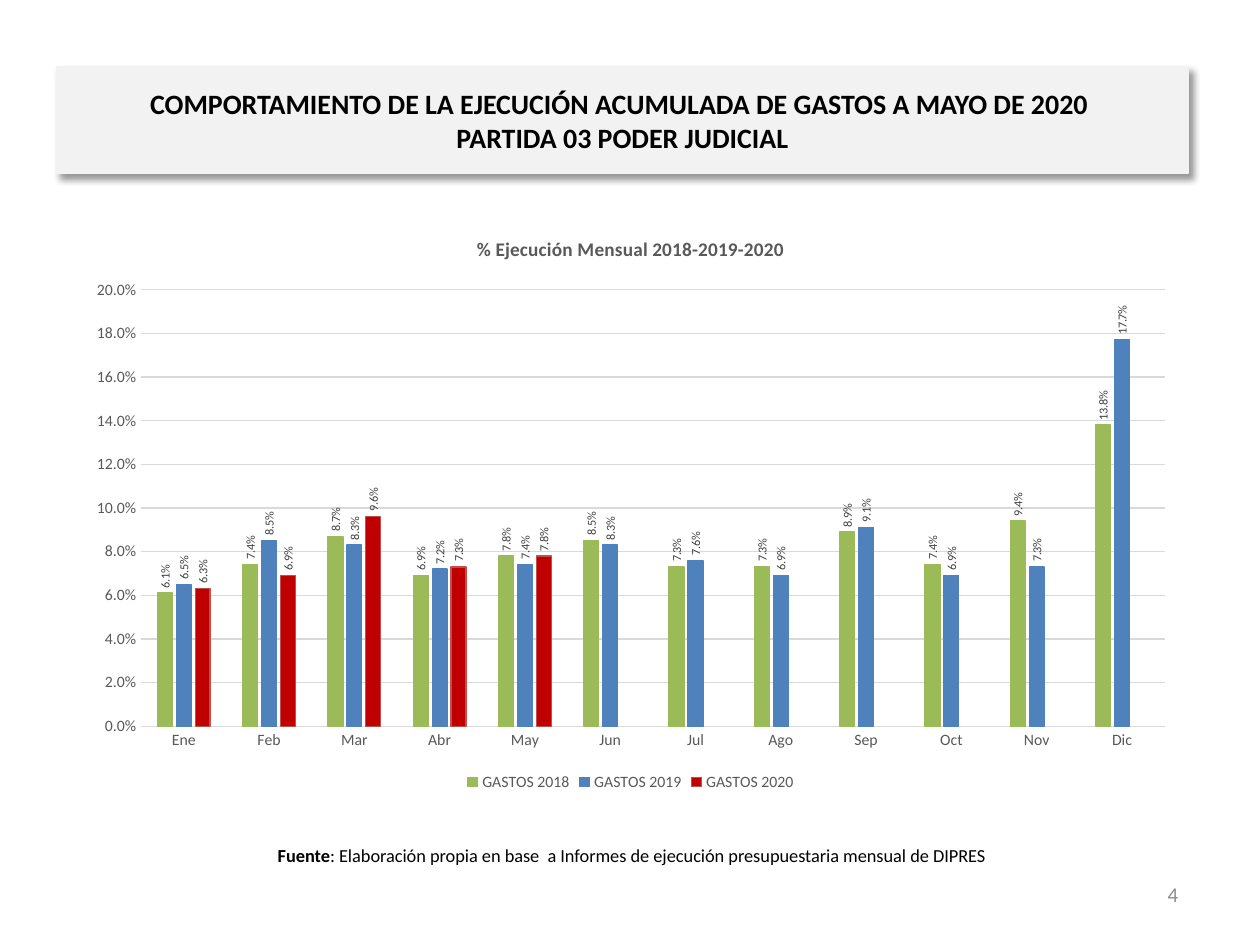
from dataclasses import dataclass

from lxml import etree
from pptx import Presentation
from pptx.chart.data import CategoryChartData
from pptx.dml.color import RGBColor
from pptx.enum.chart import XL_CHART_TYPE, XL_LABEL_POSITION, XL_LEGEND_POSITION, XL_TICK_MARK
from pptx.enum.text import MSO_ANCHOR, PP_ALIGN
from pptx.oxml import parse_xml
from pptx.oxml.ns import nsdecls, qn
from pptx.util import Inches, Pt

COLUMNS = XL_CHART_TYPE.COLUMN_CLUSTERED
OUTSIDE_END = XL_LABEL_POSITION.OUTSIDE_END
BOTTOM = XL_LEGEND_POSITION.BOTTOM
NO_TICK = XL_TICK_MARK.NONE
MIDDLE = MSO_ANCHOR.MIDDLE
CENTER, RIGHT = PP_ALIGN.CENTER, PP_ALIGN.RIGHT

FONT = "Calibri"
PERCENT = "0.0%"
BLACK = RGBColor(0x00, 0x00, 0x00)
PANEL = RGBColor(0xF2, 0xF2, 0xF2)
PAGE_NUMBER = RGBColor(0x8C, 0x8C, 0x8C)
AXIS_TEXT = RGBColor(0x59, 0x59, 0x59)
LABEL_TEXT = RGBColor(0x40, 0x40, 0x40)
GRID = RGBColor(0xD9, 0xD9, 0xD9)
GREEN = RGBColor(0x9B, 0xBB, 0x59)
BLUE = RGBColor(0x4F, 0x81, 0xBD)
RED = RGBColor(0xC0, 0x00, 0x00)
RED_EDGE = RGBColor(0xC0, 0x50, 0x4D)
HAIRLINE = Pt(0.75)

MONTHS = "Ene Feb Mar Abr May Jun Jul Ago Sep Oct Nov Dic".split()


@dataclass(frozen=True)
class Spending:
    name: str
    percents: tuple[float, ...]
    fill: RGBColor
    edge: RGBColor


SPENDING = [
    Spending("GASTOS 2018", (6.1, 7.4, 8.7, 6.9, 7.8, 8.5, 7.3, 7.3, 8.9, 7.4, 9.4, 13.8), GREEN, GREEN),
    Spending("GASTOS 2019", (6.5, 8.5, 8.3, 7.2, 7.4, 8.3, 7.6, 6.9, 9.1, 6.9, 7.3, 17.7), BLUE, BLUE),
    Spending("GASTOS 2020", (6.3, 6.9, 9.6, 7.3, 7.8), RED, RED_EDGE),
]


@dataclass(frozen=True)
class Area:
    """A rectangle in inches."""
    left: float
    top: float
    width: float
    height: float

    def lengths(self) -> list[int]:
        return [Inches(n) for n in (self.left, self.top, self.width, self.height)]


TITLE_AREA = Area(0.45, 0.53, 8.98, 0.85)
CHART_AREA = Area(0.59, 1.7, 8.83, 4.62)
SOURCE_AREA = Area(0.42, 6.59, 9.19, 0.4)
NUMBER_AREA = Area(7.12, 6.9, 2.33, 0.4)
PLOT_SHARES = {"x": 0.06, "y": 0.13, "w": 0.92, "h": 0.75}


def style_font(font, size: float, color: RGBColor, bold: bool = False) -> None:
    font.name, font.size, font.bold = FONT, Pt(size), bold
    font.color.rgb = color


def write(para, text: str, *, size: float, color: RGBColor = BLACK,
          bold: bool = False, align=CENTER) -> None:
    """Append formatted text to a paragraph, with a line break at each newline."""
    para.alignment = align
    for index, line in enumerate(text.split("\n")):
        if index:
            para.add_line_break()
        span = para.add_run()
        span.text = line
        style_font(span.font, size, color, bold)


def add_text_box(page, area: Area):
    frame = page.shapes.add_textbox(*area.lengths()).text_frame
    frame.word_wrap = True
    frame.vertical_anchor = MIDDLE
    return frame.paragraphs[0]


def add_title(page) -> None:
    box = page.shapes.title
    box.left, box.top, box.width, box.height = TITLE_AREA.lengths()
    box.fill.solid()
    box.fill.fore_color.rgb = PANEL
    box.line.color.rgb = PANEL
    box.line.width = HAIRLINE
    box._element.spPr.append(parse_xml(
        f'<a:effectLst {nsdecls("a")}><a:outerShdw blurRad="{Pt(4)}" dist="{Pt(3)}" '
        'dir="2700000" algn="tl" rotWithShape="0"><a:srgbClr val="000000">'
        '<a:alpha val="40000"/></a:srgbClr></a:outerShdw></a:effectLst>'))
    box.text_frame.vertical_anchor = MIDDLE
    write(box.text_frame.paragraphs[0],
          "COMPORTAMIENTO DE LA EJECUCIÓN ACUMULADA DE GASTOS A MAYO DE 2020 \n"
          "PARTIDA 03 PODER JUDICIAL", size=16, bold=True)


def place_plot(chart) -> None:
    """Fix the inner plot area as shares of the chart's size."""
    plot_area = chart._chartSpace.chart.plotArea
    for old in plot_area.findall(qn("c:layout")):
        plot_area.remove(old)
    layout = etree.Element(qn("c:layout"))
    manual = etree.SubElement(layout, qn("c:manualLayout"))
    settings = {"layoutTarget": "inner", "xMode": "edge", "yMode": "edge", **PLOT_SHARES}
    for name, value in settings.items():
        etree.SubElement(manual, qn(f"c:{name}")).set("val", str(value))
    plot_area.insert(0, layout)


def style_series(series, spending: Spending) -> None:
    series.format.fill.solid()
    series.format.fill.fore_color.rgb = spending.fill
    series.format.line.color.rgb = spending.edge
    series.format.line.width = HAIRLINE
    series.invert_if_negative = False
    labels = series.data_labels
    labels.show_value = True
    labels.number_format, labels.number_format_is_linked = PERCENT, False
    labels.position = OUTSIDE_END
    style_font(labels.font, 7, LABEL_TEXT)
    body = labels._element.find(qn("c:txPr")).find(qn("a:bodyPr"))
    body.set("rot", "-5400000")
    body.set("vert", "horz")


def add_spending_chart(page) -> None:
    data = CategoryChartData(number_format=PERCENT)
    data.categories = MONTHS
    for spending in SPENDING:
        shares = [round(percent / 100, 3) for percent in spending.percents]
        data.add_series(spending.name, shares + [None] * (len(MONTHS) - len(shares)))
    chart = page.shapes.add_chart(COLUMNS, *CHART_AREA.lengths(), data).chart
    style_font(chart.font, 10, BLACK)
    write(chart.chart_title.text_frame.paragraphs[0], "% Ejecución Mensual 2018-2019-2020",
          size=11, color=AXIS_TEXT, bold=True)
    chart.chart_title.include_in_layout = False

    # Legend
    chart.has_legend = True
    chart.legend.position = BOTTOM
    chart.legend.include_in_layout = False
    style_font(chart.legend.font, 9, AXIS_TEXT)

    # Axes
    months, shares = chart.category_axis, chart.value_axis
    for axis in (months, shares):
        axis.major_tick_mark = axis.minor_tick_mark = NO_TICK
        style_font(axis.tick_labels.font, 9, AXIS_TEXT)
    shares.minimum_scale, shares.maximum_scale, shares.major_unit = 0, 0.2, 0.02
    shares.tick_labels.number_format = PERCENT
    shares.tick_labels.number_format_is_linked = False
    shares.format.line.fill.background()
    for line in (months.format.line, shares.major_gridlines.format.line):
        line.color.rgb = GRID
        line.width = HAIRLINE

    # Columns
    plot = chart.plots[0]
    plot.gap_width, plot.overlap, plot.vary_by_categories = 219, -27, False
    for series, spending in zip(plot.series, SPENDING):
        style_series(series, spending)
    place_plot(chart)


def main() -> None:
    deck = Presentation()
    deck.slide_width, deck.slide_height = Inches(10), Inches(7.5)
    page = deck.slides.add_slide(deck.slide_layouts.get_by_name("Title Only"))
    add_title(page)
    add_spending_chart(page)

    # Source note and page number
    note = add_text_box(page, SOURCE_AREA)
    write(note, "Fuente", size=10.5, bold=True)
    write(note, ": Elaboración propia en base  a Informes de ejecución presupuestaria "
                "mensual de DIPRES", size=10.5)
    write(add_text_box(page, NUMBER_AREA), "4", size=12, color=PAGE_NUMBER, align=RIGHT)
    deck.save("out.pptx")


if __name__ == "__main__":
    main()
